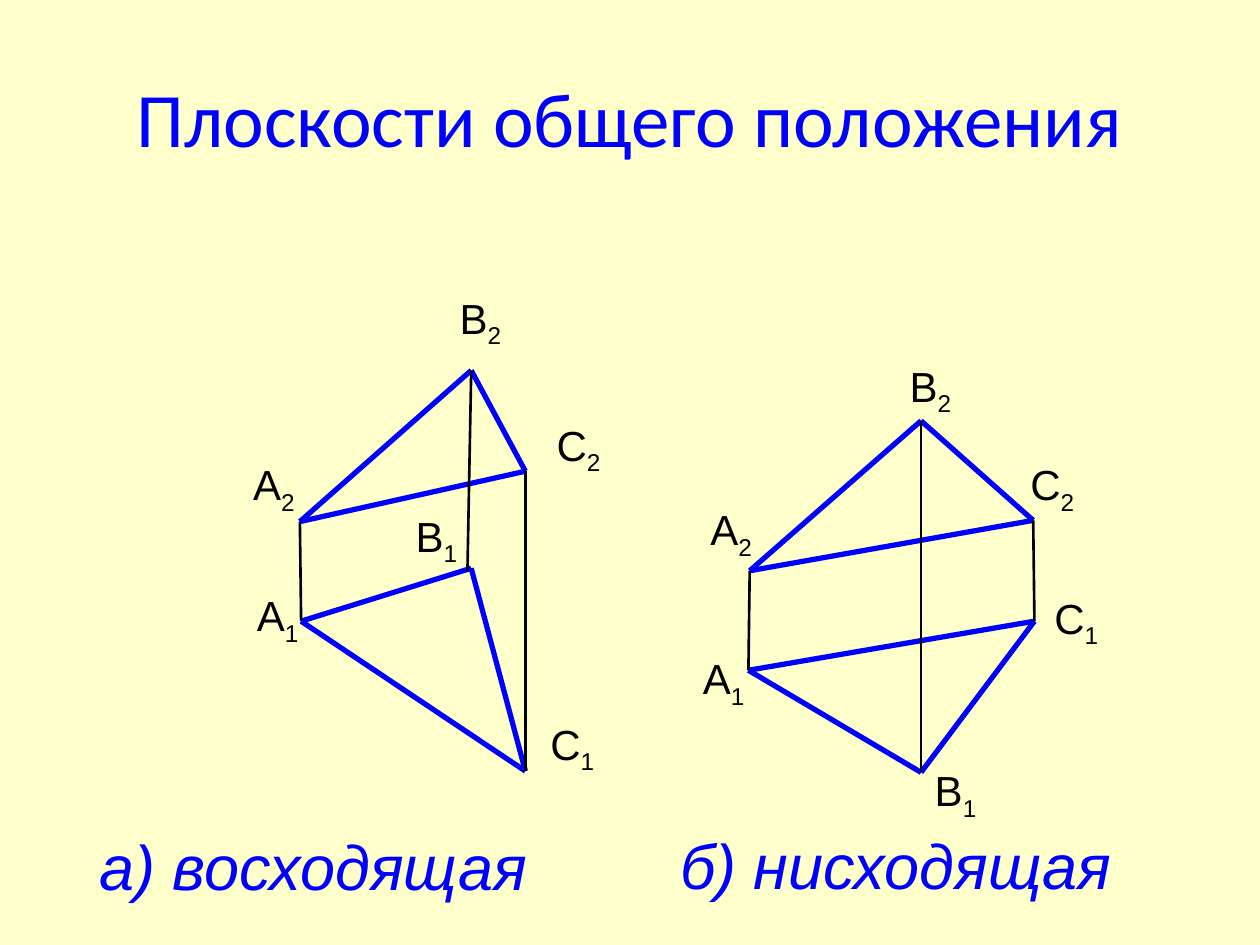
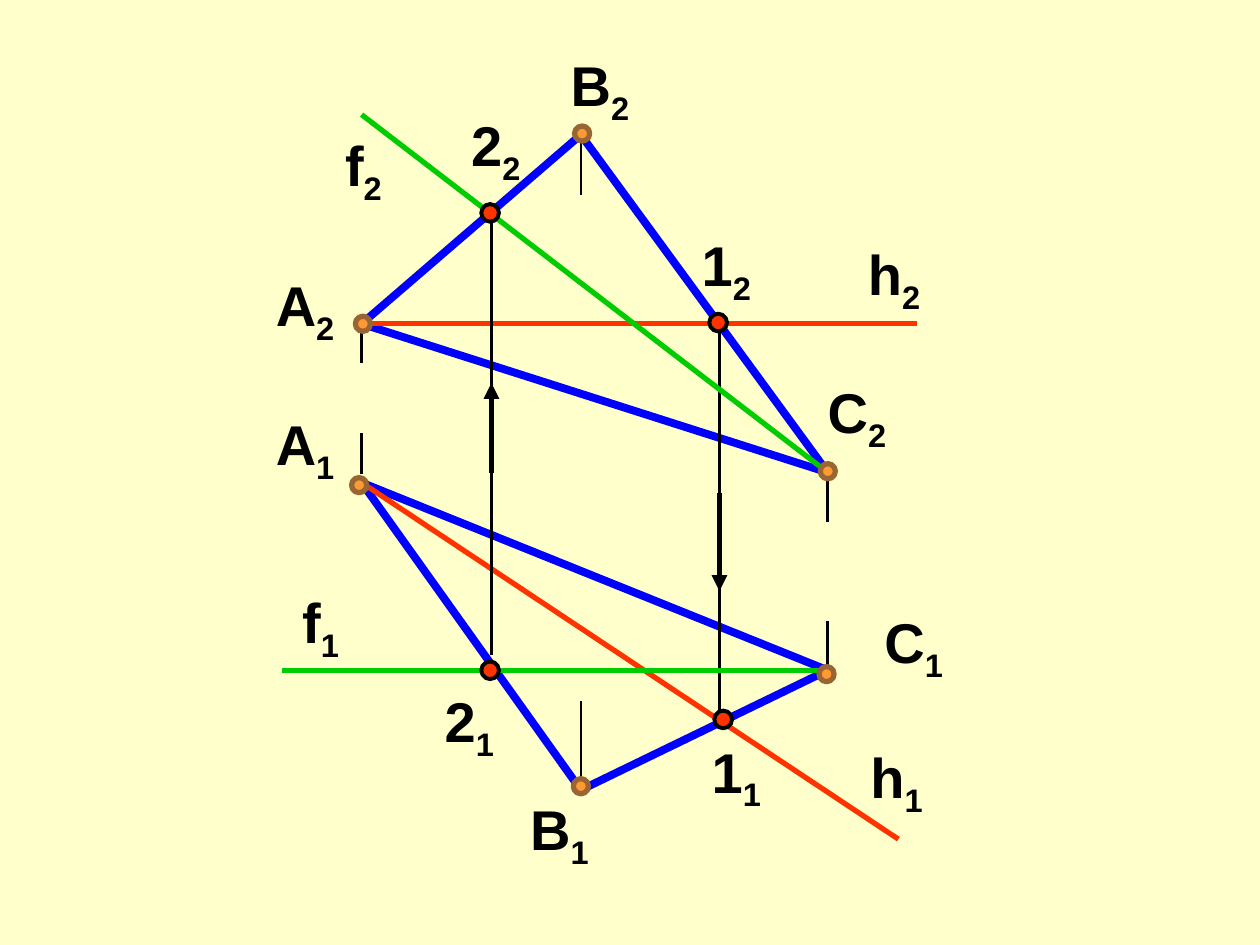
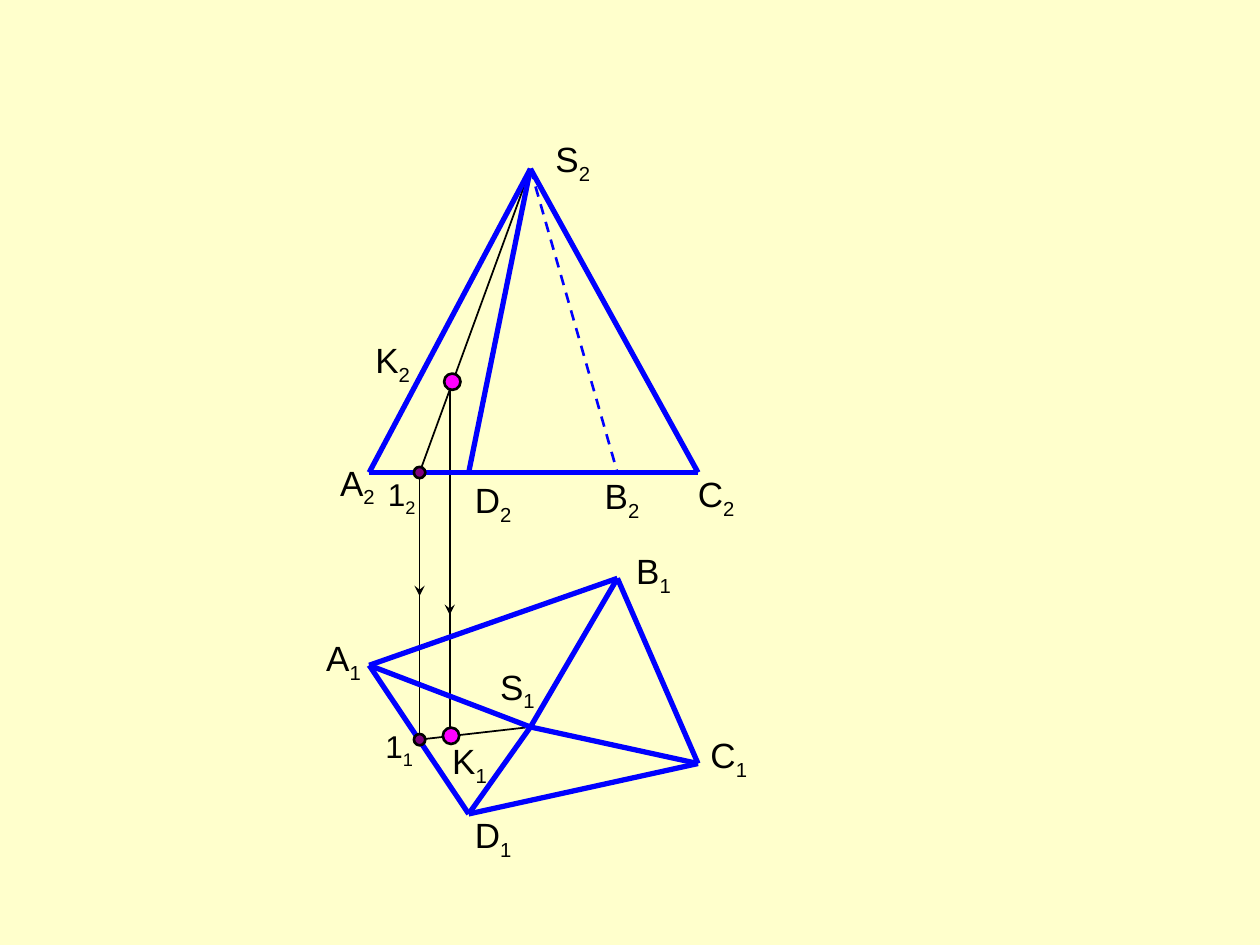
from dataclasses import dataclass

from lxml.etree import SubElement
from pptx import Presentation
from pptx.dml.color import RGBColor
from pptx.enum.dml import MSO_LINE
from pptx.enum.shapes import MSO_CONNECTOR, MSO_SHAPE
from pptx.enum.text import MSO_ANCHOR, MSO_AUTO_SIZE, PP_ALIGN
from pptx.oxml.ns import qn
from pptx.slide import Slide
from pptx.util import Inches, Pt

COLUMNS, ROWS = 10, 7.5
CELL = Inches(1)
BLUE, BLACK, RED, GREEN = "0000FF", "000000", "FF3300", "00CC00"
CREAM, ORANGE, BROWN, MAGENTA, PURPLE = "FFFFCC", "FF9933", "996633", "FF00FF", "800080"


@dataclass(frozen=True)
class Pen:
    color: str
    weight: float
    dashed: bool = False
    arrow: str = ""


@dataclass(frozen=True)
class Dot:
    fill: str
    outline: Pen
    diameter: float


@dataclass(frozen=True)
class Lettering:
    size: int
    color: str = BLACK
    bold: bool = False
    italic: bool = False


@dataclass(frozen=True)
class Label:
    text: str
    column: float
    row: float
    width: float
    wrap: bool = False


EDGE, THICK_EDGE, HIDDEN_EDGE = Pen(BLUE, 3), Pen(BLUE, 4.5), Pen(BLUE, 1.5, dashed=True)
LINK, THIN_LINK = Pen(BLACK, 1.5), Pen(BLACK, 1)
HORIZONTAL, FRONTAL = Pen(RED, 3), Pen(GREEN, 3)
BOLD_ARROW, THIN_ARROW = Pen(BLACK, 3, arrow="triangle"), Pen(BLACK, 0.75, arrow="stealth")
CROSSING = Dot(RED, Pen(BLACK, 2.25), 0.14)
VERTEX = Dot(ORANGE, Pen(BROWN, 3), 0.12)
SOUGHT = Dot(MAGENTA, LINK, 0.13)
HELPER = Dot(PURPLE, LINK, 0.09)
CAPTION = Lettering(36, BLUE, italic=True)

Point = tuple[float, float]
Points = dict[str, Point]


def grid(cells: float) -> int:
    """Turn a number of grid cells into a length."""
    return round(cells * CELL)


def rgb(color: str) -> RGBColor:
    """Turn a hex string into a colour."""
    return RGBColor.from_string(color)


def style_run(span, lettering: Lettering) -> None:
    """Apply the lettering to one run."""
    font = span.font
    font.name, font.size = "Arial", Pt(lettering.size)
    font.bold, font.italic = lettering.bold, lettering.italic
    font.color.rgb = rgb(lettering.color)


def add_box(page: Slide, label: Label, lettering: Lettering):
    """Add a text box one line high and return its paragraph."""
    height = lettering.size * 1.2 / 72 + 0.1
    box = page.shapes.add_textbox(*map(grid, (label.column, label.row, label.width, height)))
    frame = box.text_frame
    frame.word_wrap = label.wrap
    frame.auto_size = MSO_AUTO_SIZE.SHAPE_TO_FIT_TEXT
    return frame.paragraphs[0]


def add_labels(page: Slide, lettering: Lettering, labels: list[Label]) -> None:
    """Write point names with their index as a subscript."""
    for label in labels:
        para = add_box(page, label, lettering)
        for part in label.text:
            span = para.add_run()
            span.text = part
            style_run(span, lettering)
        span.font._element.set("baseline", "-25000")


def add_caption(page: Slide, label: Label) -> None:
    """Write the caption under a drawing."""
    para = add_box(page, label, CAPTION)
    para.text = label.text
    style_run(para.runs[0], CAPTION)


def add_line(page: Slide, pen: Pen, start: Point, end: Point) -> None:
    """Draw a straight line with the pen."""
    line = page.shapes.add_connector(MSO_CONNECTOR.STRAIGHT, *map(grid, (*start, *end)))
    line.line.color.rgb = rgb(pen.color)
    line.line.width = Pt(pen.weight)
    if pen.dashed:
        line.line.dash_style = MSO_LINE.DASH
    if pen.arrow:
        SubElement(line.line._get_or_add_ln(), qn("a:tailEnd"), type=pen.arrow)
    SubElement(line._element.spPr, qn("a:effectLst"))


def join(page: Slide, pen: Pen, points: Points, pairs: str) -> None:
    """Join named points, given as pairs such as A2-B2."""
    for pair in pairs.split():
        start, end = pair.split("-")
        add_line(page, pen, points[start], points[end])


def add_dots(page: Slide, dot: Dot, centres: list[Point]) -> None:
    """Mark points with round dots."""
    for column, row in centres:
        corner = (column - dot.diameter / 2, row - dot.diameter / 2)
        circle = page.shapes.add_shape(
            MSO_SHAPE.OVAL, *map(grid, (*corner, dot.diameter, dot.diameter)))
        circle.shadow.inherit = False
        circle.fill.solid()
        circle.fill.fore_color.rgb = rgb(dot.fill)
        circle.line.color.rgb = rgb(dot.outline.color)
        circle.line.width = Pt(dot.outline.weight)


def add_title(page: Slide, text: str) -> None:
    """Place and format the slide title."""
    title = page.shapes.title
    title.left, title.top, title.width, title.height = map(grid, (0.5, 0.3, COLUMNS - 1, 1.25))
    title.text_frame.text = text
    title.text_frame.vertical_anchor = MSO_ANCHOR.MIDDLE
    para = title.text_frame.paragraphs[0]
    para.alignment = PP_ALIGN.CENTER
    font = para.runs[0].font
    font.name, font.size = "Calibri", Pt(44)
    font.color.rgb = rgb(BLUE)


def draw_general_planes(page: Slide) -> None:
    """Show an ascending and a descending plane."""
    add_title(page, "Плоскости общего положения")
    ascending = {"A2": (2.38, 4.14), "B2": (3.74, 2.94), "C2": (4.17, 3.74),
                 "A1": (2.39, 4.93), "B1": (3.74, 4.51), "C1": (4.17, 6.12),
                 "B0": (3.71, 4.53)}
    descending = {"A2": (5.95, 4.53), "B2": (7.31, 3.34), "C2": (8.2, 4.13),
                  "A1": (5.94, 5.32), "B1": (7.31, 6.13), "C1": (8.21, 4.93)}
    for points, links in ((ascending, "A1-A2 B2-B0 C2-C1"), (descending, "A2-A1 B2-B1 C2-C1")):
        join(page, EDGE, points, "A2-B2 B2-C2 C2-A2 A1-B1 B1-C1 C1-A1")
        join(page, LINK, points, links)
    add_labels(page, Lettering(24), [
        Label("А2", 1.91, 3.59, 0.55), Label("В2", 3.55, 2.27, 0.55),
        Label("С2", 4.32, 3.28, 0.57), Label("А1", 1.94, 4.63, 0.55),
        Label("В1", 3.2, 4, 0.55), Label("С1", 4.27, 5.65, 0.57),
        Label("А2", 5.54, 3.95, 0.55), Label("В2", 7.12, 2.81, 0.55),
        Label("С2", 8.08, 3.59, 0.57), Label("А1", 5.48, 5.13, 0.55),
        Label("В1", 7.32, 6.02, 0.55), Label("С1", 8.27, 4.65, 0.57)])
    add_caption(page, Label("а) восходящая", 0.69, 6.52, 3.61))
    add_caption(page, Label("б) нисходящая", 5.3, 6.51, 3.63))


def draw_level_lines(page: Slide) -> None:
    """Show the horizontal and the frontal of a plane."""
    left, middle, right, first, second = 2.87, 4.61, 6.57, 5.71, 3.9
    points = {"A2": (left, 2.57), "B2": (middle, 1.07), "C2": (right, 3.75),
              "A1": (left, 3.83), "B1": (middle, 6.27), "C1": (right, 5.32),
              "h2": (7.28, 2.57), "h1": (7.13, 6.66),
              "f2": (left, 0.91), "f1": (2.24, 5.32)}
    join(page, THICK_EDGE, points, "A2-C2 A2-B2 B2-C2 A1-C1 A1-B1 B1-C1")
    for column, start, end in ((left, 2.57, 2.88), (middle, 1.07, 1.55), (right, 3.75, 4.14),
                               (right, 5.32, 4.93), (middle, 6.27, 5.56), (left, 3.76, 3.44)):
        add_line(page, LINK, (column, start), (column, end))
    join(page, HORIZONTAL, points, "A2-h2")
    add_line(page, LINK, (first, 2.57), (first, 5.65))
    join(page, HORIZONTAL, points, "A1-h1")
    join(page, FRONTAL, points, "C1-f1")
    add_line(page, LINK, (second, 5.2), (second, 1.7))
    join(page, FRONTAL, points, "C2-f2")
    add_line(page, BOLD_ARROW, (first, 3.91), (first, 4.69))
    add_line(page, BOLD_ARROW, (second, 3.75), (second, 3.04))
    add_dots(page, CROSSING, [(5.7, 2.56), (3.89, 1.69), (3.89, 5.32), (5.74, 5.71)])
    add_dots(page, VERTEX, [(2.85, 3.85), (4.61, 6.24), (6.56, 5.35),
                            (2.88, 2.57), (4.62, 1.06), (6.57, 3.74)])
    add_labels(page, Lettering(32, bold=True), [
        Label("А2", 2.09, 2.1, 0.68), Label("А1", 2.09, 3.2, 0.68),
        Label("В2", 4.43, 0.35, 0.68), Label("В1", 4.11, 6.26, 0.68),
        Label("С2", 6.47, 2.95, 0.68), Label("С1", 6.92, 4.77, 0.68),
        Label("12", 5.47, 1.78, 0.61), Label("11", 5.55, 5.8, 0.61),
        Label("22", 3.64, 0.83, 0.61), Label("21", 3.43, 5.4, 0.61),
        Label("h2", 6.79, 1.85, 0.63), Label("h1", 6.81, 5.84, 0.63),
        Label("f2", 2.64, 0.99, 0.51), Label("f1", 2.3, 4.61, 0.51)])


def draw_pyramid(page: Slide) -> None:
    """Show a point on a face of a pyramid."""
    base = 3.75
    points = {"S2": (4.21, 1.34), "A2": (2.93, base), "B2": (4.9, base), "C2": (5.54, base),
              "D2": (3.72, base), "12": (3.33, base), "K2": (3.57, 3.01),
              "S1": (4.21, 5.77), "A1": (2.93, 5.28), "B1": (4.9, 4.59), "C1": (5.54, 6.06),
              "D1": (3.72, 6.46), "11": (3.33, 5.87), "K1": (3.57, 5.87)}
    join(page, THIN_LINK, points, "S2-12 12-11 11-S1 K2-K1")
    join(page, EDGE, points, "A2-C2 A2-S2 S2-D2")
    join(page, HIDDEN_EDGE, points, "S2-B2")
    join(page, EDGE, points, "S2-C2 A1-B1 B1-C1 C1-D1 D1-A1 A1-S1 S1-D1 S1-C1 S1-B1")
    add_line(page, THIN_ARROW, (3.33, 4.19), (3.33, 4.73))
    add_line(page, THIN_ARROW, (3.57, 4.34), (3.57, 4.88))
    add_dots(page, SOUGHT, [(3.59, 3.03), (3.58, 5.84)])
    add_dots(page, HELPER, [points["12"], points["11"]])
    add_labels(page, Lettering(20), [
        Label("S2", 4.31, 1.04, 0.49), Label("A1", 2.49, 5, 0.49),
        Label("D1", 3.67, 6.41, 0.5), Label("C1", 5.54, 5.77, 0.5),
        Label("B1", 4.95, 4.31, 0.49), Label("S1", 3.87, 5.23, 0.49),
        Label("A2", 2.6, 3.61, 0.49), Label("D2", 3.67, 3.75, 0.64, wrap=True),
        Label("B2", 4.7, 3.72, 0.49), Label("C2", 5.44, 3.7, 0.5),
        Label("K2", 2.88, 2.64, 0.49), Label("K1", 3.49, 5.82, 0.58, wrap=True)])
    add_labels(page, Lettering(18), [Label("12", 2.98, 3.72, 0.43), Label("11", 2.96, 5.72, 0.43)])


def main() -> None:
    """Build the deck and save it."""
    deck = Presentation()
    deck.slide_width, deck.slide_height = grid(COLUMNS), grid(ROWS)
    backdrop = deck.slide_master.background.fill
    backdrop.solid()
    backdrop.fore_color.rgb = rgb(CREAM)
    title_only, blank = deck.slide_layouts[5], deck.slide_layouts[6]
    for layout, draw in ((title_only, draw_general_planes), (blank, draw_level_lines),
                         (blank, draw_pyramid)):
        draw(deck.slides.add_slide(layout))
    deck.save("out.pptx")


if __name__ == "__main__":
    main()
